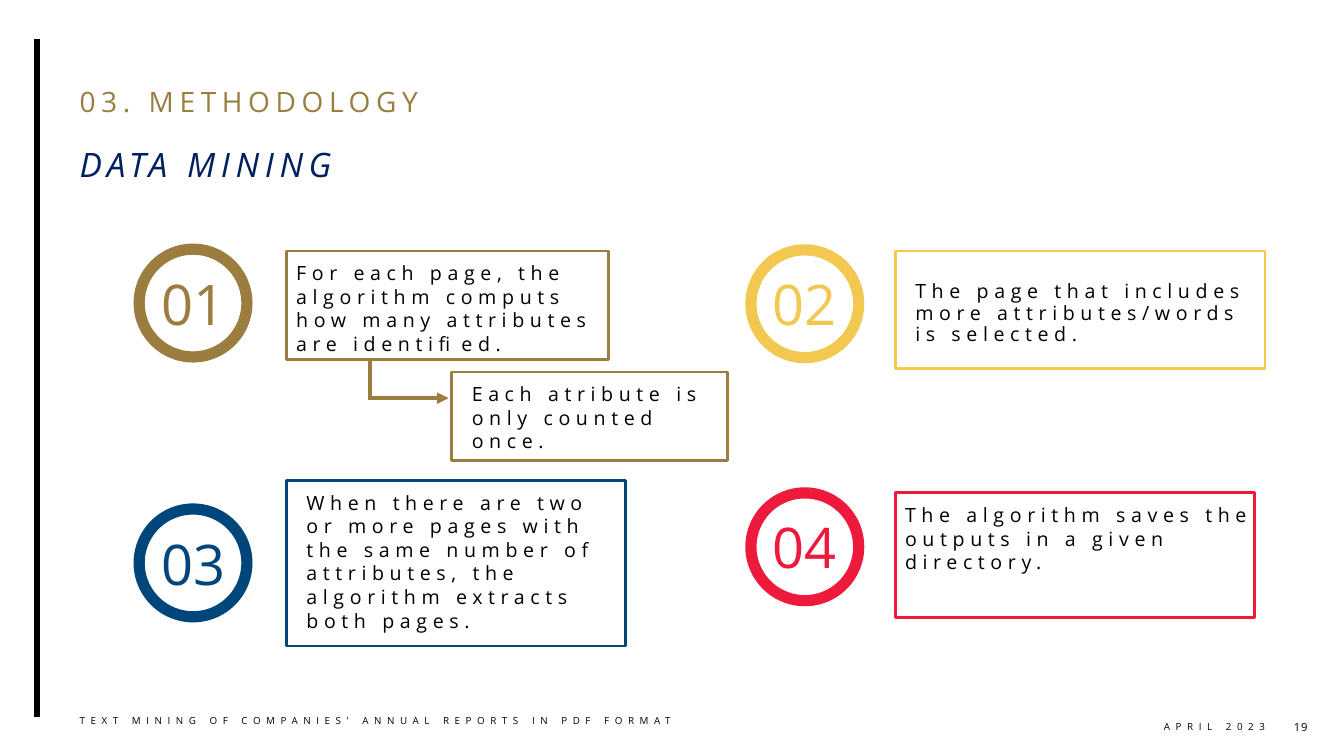
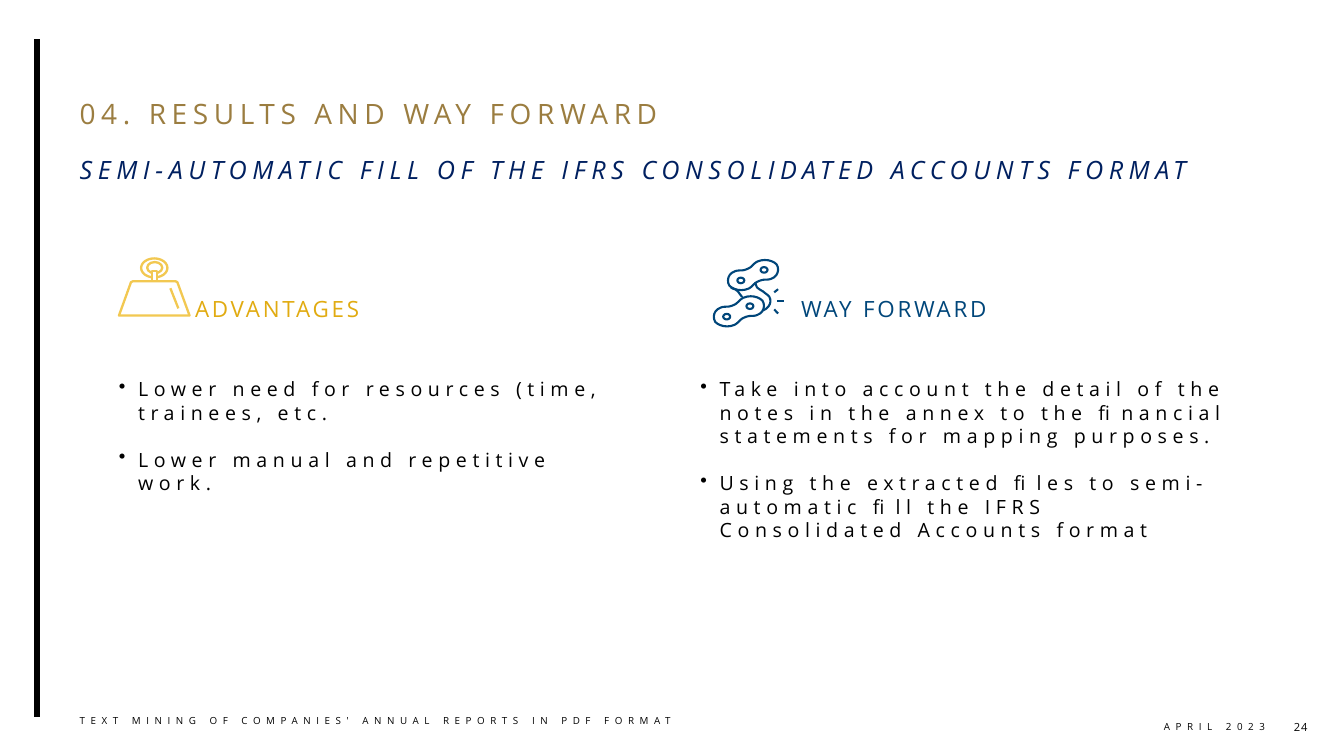
from lxml.etree import SubElement
from pptx import Presentation
from pptx.dml.color import RGBColor
from pptx.enum.shapes import MSO_CONNECTOR as Connector, MSO_SHAPE as Preset
from pptx.enum.text import MSO_ANCHOR as Anchor, MSO_AUTO_SIZE as AutoSize, PP_ALIGN as Align
from pptx.oxml.ns import qn
from pptx.util import Pt

FONT = "Open Sans"
COLORS = {
    "black": "000000", "white": "FFFFFF", "navy": "002060", "bronze": "9B7D40",
    "yellow": "F2C851", "amber": "E1AB11", "blue": "00467A", "red": "ED1A3B",
}
FOOTER = "TEXT MINING OF COMPANIES' ANNUAL REPORTS IN PDF FORMAT"
DATE = "APRIL 2023"
LEFT, HEAD_WIDTH, HEAD_HEIGHT = 56.9, 818.6, 70.6
CIRCLE = 77

# number, colour, circle corner, box, left and top inset, line spacing, text
STEPS = [
    ("01", "bronze", (99.4, 178), (204.5, 179.3, 230.4, 77.8), (7.2, 7.2), 1,
     "For each page, the algorithm computs how many attributes are identified."),
    ("02", "yellow", (536.4, 178.5), (639.4, 179.3, 264.2, 84.2), (14.4, 22.2), 0.9,
     "The page that includes more attributes/words is selected."),
    ("03", "blue", (99.4, 363.6), (204.5, 343.4, 242.6, 118.1), (14.4, 7.2), 1,
     "When there are two or more pages with the same number of attributes, "
     "the algorithm extracts both pages."),
    ("04", "red", (536.4, 352.1), (639.4, 352.1, 257, 89.3), (7.2, 7.2), 1,
     "The algorithm saves the outputs in a given directory."),
]
ADVANTAGES = [
    "Lower need for resources (time, trainees, etc.",
    "Lower manual and repetitive work.",
]
WAY_FORWARD = [
    "Take into account the detail of the notes in the annex to the financial "
    "statements for mapping purposes.",
    "Using the extracted files to semi-automatic fill the IFRS Consolidated Accounts format",
]

# Icon outlines: a start point, then three points for each curve
WEIGHT_BODY = [(95, 200.9), (125.3, 200.9), (126.7, 201.6), (135.4, 225.4),
               (85, 225.4), (93.6, 201.6)]
HALF_LINK = [(5.8, 9.4), (7.2, 8.6), (9.4, 8.6), (10.8, 8.6),
             (12.2, 8.6), (14.4, 7.9), (15.8, 7.2), (17.3, 6.5), (18, 5.8), (19.4, 4.3),
             (20.2, 3.6), (20.9, 2.9), (22.3, 2.2), (27.4, 0), (33.1, 1.4), (36, 4.3),
             (38.2, 7.9), (36.7, 13), (32.4, 14.4)]
LINK_SPAN = (38.2, 23.8)
LINK_HOLES = [(7.9, 13.7), (24.5, 6.2)]
STRANDS = [
    [(539.3, 201.6), (540, 203), (540, 203.8), (540.7, 205.2),
     (542.2, 206.6), (543.6, 207.4), (545, 208.1), (546.5, 209.5), (547.9, 210.2),
     (549.4, 211.7), (551.5, 215.3), (550.1, 219.6), (545, 221.8)],
    [(522, 205.2), (522.7, 205.9), (524.2, 206.6), (524.9, 206.6),
     (526.3, 207.4), (527.8, 208.8), (528.5, 210.2), (529.2, 211), (529.9, 211.7),
     (529.9, 212.4)],
]
SPARKS = [((555.1, 215.3), (560.2, 215.3)), ((553, 221), (555.8, 223.9)),
          ((553, 208.8), (555.8, 206.6))]


def rgb(name):
    return RGBColor.from_string(COLORS[name])


def lengths(values):
    return [Pt(value) for value in values]


# Text
def format_paragraph(paragraph, size, color="black", spacing=4, italic=False,
                     align=Align.LEFT, line=1):
    paragraph.alignment = align
    paragraph.line_spacing = line
    for run in paragraph.runs:
        run.font.name, run.font.size = FONT, Pt(size)
        run.font.italic = italic
        run.font.color.rgb = rgb(color)
        run._r.get_or_add_rPr().set("spc", str(int(spacing * 100)))


def set_frame(frame, insets=(0, 0, 0, 0), anchor=Anchor.TOP, wrap=True):
    frame.auto_size = AutoSize.NONE
    frame.word_wrap = wrap
    frame.vertical_anchor = anchor
    (frame.margin_left, frame.margin_top,
     frame.margin_right, frame.margin_bottom) = lengths(insets)


def write(shape, text, size, insets=(0, 0, 0, 0), anchor=Anchor.TOP, wrap=True, **style):
    set_frame(shape.text_frame, insets, anchor, wrap)
    shape.text_frame.text = text
    format_paragraph(shape.text_frame.paragraphs[0], size, **style)


def add_label(shapes, box, text, size, **style):
    write(shapes.add_textbox(*lengths(box)), text, size, **style)


def add_bullets(shapes, box, items):
    frame = shapes.add_textbox(*lengths(box)).text_frame
    set_frame(frame, (28, 7.2, 28, 28))
    for index, item in enumerate(items):
        paragraph = frame.add_paragraph() if index else frame.paragraphs[0]
        properties = paragraph._p.get_or_add_pPr()
        properties.set("marL", str(Pt(13.7)))
        properties.set("indent", str(-Pt(13.7)))
        SubElement(properties, qn("a:buChar")).set("char", "•")
        paragraph.text = item
        format_paragraph(paragraph, 14)
        if index:
            paragraph.space_before = Pt(16.8)


# Shapes and lines
def style_shape(shape, color, width, fill=None):
    shape.shadow.inherit = False
    if fill:
        shape.fill.solid()
        shape.fill.fore_color.rgb = rgb(fill)
    else:
        shape.fill.background()
    shape.line.color.rgb = rgb(color)
    shape.line.width = Pt(width)
    return shape


def add_preset(shapes, preset, box, color, width, fill=None):
    return style_shape(shapes.add_shape(preset, *lengths(box)), color, width, fill)


def add_line(shapes, start, end, color, width, arrow=False):
    line = shapes.add_connector(Connector.STRAIGHT, *lengths((*start, *end)))
    line.line.color.rgb = rgb(color)
    line.line.width = Pt(width)
    if arrow:
        SubElement(line.line._get_or_add_ln(), qn("a:tailEnd")).set("type", "triangle")
    SubElement(line._element.spPr, qn("a:effectLst"))


def add_outline(shapes, points, color, width, close=True):
    start, *rest = [tuple(lengths(point)) for point in points]
    builder = shapes.build_freeform(*start)
    builder.add_line_segments(rest, close=close)
    style_shape(builder.convert_to_shape(), color, width)


def trace_curves(points, steps=6):
    traced = [points[0]]
    for first in range(0, len(points) - 1, 3):
        curve = points[first:first + 4]
        for step in range(1, steps + 1):
            t = step / steps
            weights = ((1 - t) ** 3, 3 * t * (1 - t) ** 2, 3 * t * t * (1 - t), t ** 3)
            traced.append(tuple(sum(w * point[axis] for w, point in zip(weights, curve))
                                for axis in (0, 1)))
    return traced


# Parts of the slides
def add_heading(shapes, top, text, size, color, italic=False, placeholder=None):
    box = lengths((LEFT, top, HEAD_WIDTH, HEAD_HEIGHT))
    heading = placeholder or shapes.add_textbox(*box)
    heading.left, heading.top, heading.width, heading.height = box
    write(heading, text, size, (0, 14.4, 0, 14.4), color=color, italic=italic, line=0.9)


def add_framed_slide(prs, number):
    slide = prs.slides.add_slide(prs.slide_layouts[5])
    shapes = slide.shapes
    add_line(shapes, (26.6, 28.1), (26.6, 511.9), "black", 4)
    add_label(shapes, (LEFT, 507.8, 538.6, 14.4), FOOTER, 7, anchor=Anchor.MIDDLE)
    add_label(shapes, (790.6, 512, 113, 14.4), DATE, 7, anchor=Anchor.MIDDLE,
              align=Align.RIGHT)
    add_label(shapes, (906.5, 512, 27.4, 14.4), number, 8, anchor=Anchor.MIDDLE,
              align=Align.RIGHT, spacing=0.5)
    return shapes


def add_text_box(shapes, box, color, text, insets=(14.4, 7.2), width=2, line=1):
    frame = add_preset(shapes, Preset.RECTANGLE, box, color, width)
    write(frame, text, 14, (*insets, 0, 7.2), line=line)


def add_step(shapes, number, color, corner, box, insets, line, text):
    add_text_box(shapes, box, color, text, insets, line=line)
    circle = add_preset(shapes, Preset.OVAL, (*corner, CIRCLE, CIRCLE), color, 8, "white")
    write(circle, number, 40, (0, 11.5, 0, 0), Anchor.MIDDLE, color=color, spacing=0,
          align=Align.CENTER, line=0.7)


def add_column_title(shapes, box, text, color):
    add_label(shapes, box, text, 16, insets=(7.2,) * 4, wrap=False, color=color,
              spacing=2, align=Align.CENTER)


def add_weight_icon(shapes):
    for ring in ((100.8, 184.6, 18.8, 13.6), (105.1, 187.2, 10.8, 8)):
        add_preset(shapes, Preset.OVAL, ring, "yellow", 1.63)
    add_outline(shapes, WEIGHT_BODY, "yellow", 1.63)
    add_preset(shapes, Preset.RECTANGLE, (108.7, 193.7, 3.6, 7.2), "yellow", 1.63, "white")
    add_line(shapes, (121.7, 205.9), (127.4, 220.3), "yellow", 1.63)


def add_chain_icon(shapes):
    # The second half of a link is the first one turned around its middle
    turned = [(LINK_SPAN[0] - x, LINK_SPAN[1] - y) for x, y in HALF_LINK]
    link = trace_curves(HALF_LINK) + trace_curves(turned)
    for left, top in ((518.8, 184.6), (508.7, 210.5)):
        add_outline(shapes, [(left + x, top + y) for x, y in link], "blue", 1.5)
        for x, y in LINK_HOLES:
            add_preset(shapes, Preset.OVAL, (left + x, top + y, 5, 4), "blue", 1.5)
    for strand in STRANDS:
        add_outline(shapes, trace_curves(strand), "blue", 1.5, close=False)
    for start, end in SPARKS:
        add_line(shapes, start, end, "blue", 1.5)


def build_methodology(prs):
    shapes = add_framed_slide(prs, "19")
    add_heading(shapes, 49, "03. METHODOLOGY", 20, "bronze")
    add_heading(shapes, 91.4, "DATA MINING", 24, "navy", True, shapes.title)
    for step in STEPS:
        add_step(shapes, *step)
    # Side note to the first step
    add_line(shapes, (264.2, 257), (264.2, 285.1), "bronze", 2.75)
    add_line(shapes, (262.8, 284.4), (320.4, 284.4), "bronze", 2.75, arrow=True)
    add_text_box(shapes, (322.6, 265.7, 197.3, 63.4), "bronze",
                 "Each atribute is only counted once.")


def build_results(prs):
    shapes = add_framed_slide(prs, "24")
    add_heading(shapes, 56.9, "04. RESULTS AND WAY FORWARD", 20, "bronze",
                placeholder=shapes.title)
    add_heading(shapes, 97.9, "SEMI-AUTOMATIC FILL OF THE IFRS CONSOLIDATED ACCOUNTS FORMAT",
                18, "navy", True)
    # Each column: icon and title in one group, bullets below
    advantages = shapes.add_group_shape().shapes
    add_weight_icon(advantages)
    add_column_title(advantages, (130.3, 203.8, 135.4, 33.8), "ADVANTAGES", "amber")
    add_bullets(shapes, (LEFT, 262.1, 423.4, 121.7), ADVANTAGES)
    way_forward = shapes.add_group_shape().shapes
    add_chain_icon(way_forward)
    add_column_title(way_forward, (563, 203.8, 151.2, 33.8), "WAY FORWARD", "blue")
    add_bullets(shapes, (472.3, 262.1, 437.8, 121.7), WAY_FORWARD)


def main():
    prs = Presentation()
    prs.slide_width, prs.slide_height = Pt(960), Pt(540)
    build_methodology(prs)
    build_results(prs)
    prs.save("out.pptx")


if __name__ == "__main__":
    main()
